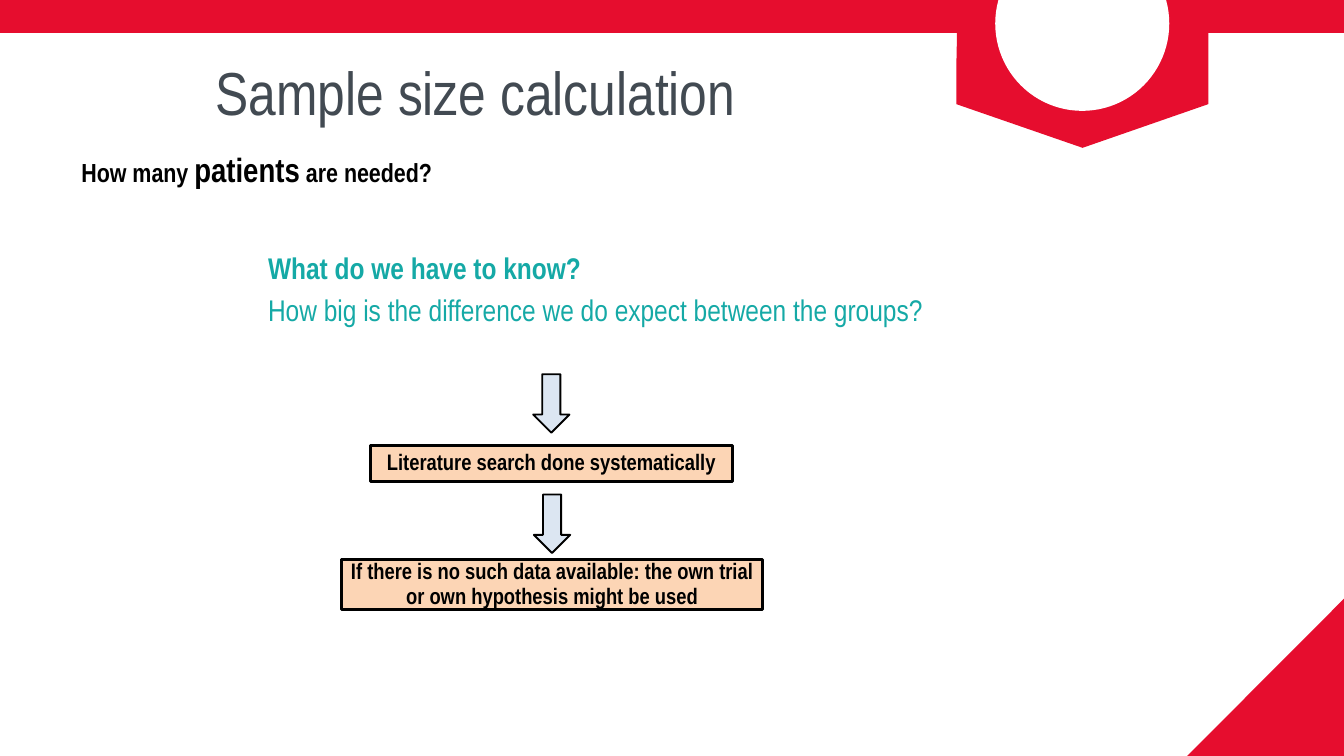
from pptx import Presentation
from pptx.dml.color import RGBColor
from pptx.enum import shapes, text
from pptx.util import Pt

FONT = "Arial Narrow"
RED, WHITE, BLACK = "E60D2E", "FFFFFF", "000000"
SLATE, TEAL, PEACH, PALE_BLUE = "424A52", "15A9A6", "FCD5B5", "DCE6F2"
WIDTH, HEIGHT = 1440, 810
CENTER, LEFT = text.PP_ALIGN.CENTER, text.PP_ALIGN.LEFT

# Content: each paragraph is a list of (wording, size, bold) runs
TITLE = [[("Sample size calculation", 65, False)]]
QUESTION = [[("How many ", 28, True), ("patients", 36, True), (" are needed?", 28, True)]]
NEEDS = [
    [("What do we have to know?", 32, True)],
    [("How big is the difference we do expect between the groups?", 32, False)],
]
STEPS = [  # wording, box (left, top, width, height)
    ("Literature search done systematically", (396.7, 477.4, 388, 38.2)),
    ("If there is no such data available: the own trial or own hypothesis might be used",
     (365.8, 599.8, 451.4, 53.3)),
]
ARROW_TOPS = [401, 529.9]
ARROW_WIDTH, ARROW_HEIGHT = 38.9, 62.6

# Red decoration
CORNER = [(WIDTH, 641.5), (WIDTH, HEIGHT), (1272, HEIGHT)]
BADGE = [(1294.6, 0), (1294.6, 111.6), (1159.9, 158.4), (1024.6, 111.6),
         (1024.6, 72.7), (1025.3, 40.3), (1024.6, 0)]

prs = Presentation()
prs.slide_width, prs.slide_height = Pt(WIDTH), Pt(HEIGHT)
slide = prs.slides.add_slide(prs.slide_layouts[6])


def color(value):
    return RGBColor.from_string(value)


def paint(shape, fill, line_width=None):
    shape.shadow.inherit = False
    shape.fill.solid()
    shape.fill.fore_color.rgb = color(fill)
    if line_width:
        shape.line.color.rgb = color(BLACK)
        shape.line.width = Pt(line_width)
    else:
        shape.line.fill.background()


def add_preset(kind, box, fill, line_width=None):
    shape = slide.shapes.add_shape(kind, *map(Pt, box))
    paint(shape, fill, line_width)
    return shape


def add_outline(points, fill):
    corners = [(Pt(x), Pt(y)) for x, y in points]
    builder = slide.shapes.build_freeform(*corners[0])
    builder.add_line_segments(corners[1:], close=True)
    paint(builder.convert_to_shape(), fill)


def write(shape, paragraphs, ink, align, spacing=None, gap=0):
    frame = shape.text_frame
    frame.word_wrap = True
    for i, runs in enumerate(paragraphs):
        paragraph = frame.add_paragraph() if i else frame.paragraphs[0]
        paragraph.alignment = align
        if spacing:
            paragraph.line_spacing = spacing
        if i:
            paragraph.space_before = Pt(gap)
        for wording, size, bold in runs:
            run = paragraph.add_run()
            run.text = wording
            run.font.name, run.font.size, run.font.bold = FONT, Pt(size), bold
            run.font.color.rgb = color(ink)
    return frame


def add_text(box, *style, **spacing):
    return write(slide.shapes.add_textbox(*map(Pt, box)), *style, **spacing)


# Banner, corner and badge
add_preset(shapes.MSO_SHAPE.RECTANGLE, (0, 0, WIDTH, 35.3), RED)
add_outline(CORNER, RED)
add_outline(BADGE, RED)
add_preset(shapes.MSO_SHAPE.OVAL, (1066.3, -68.4, 186.5, 187.2), WHITE)

# Question and what must be known
add_text((-92.9, 155.5, 735.8, 81.4), QUESTION, BLACK, CENTER)
add_text((280.1, 268.6, 793.4, 69.8), NEEDS, TEAL, LEFT, spacing=0.9, gap=10)

# Flow: an arrow leads into each step, centred on its box
for (wording, box), arrow_top in zip(STEPS, ARROW_TOPS):
    arrow_left = box[0] + (box[2] - ARROW_WIDTH) / 2
    add_preset(shapes.MSO_SHAPE.DOWN_ARROW,
               (arrow_left, arrow_top, ARROW_WIDTH, ARROW_HEIGHT), PALE_BLUE, 2)
    step = add_preset(shapes.MSO_SHAPE.RECTANGLE, box, PEACH, 3.25)
    frame = write(step, [[(wording, 24, True)]], BLACK, CENTER, spacing=0.9)
    frame.vertical_anchor = text.MSO_ANCHOR.MIDDLE

# Title
heading = add_text((59, 45.4, 901.4, 84.2), TITLE, SLATE, CENTER, spacing=Pt(91))
heading.margin_left = heading.margin_right = heading.margin_top = heading.margin_bottom = 0

prs.save("out.pptx")
